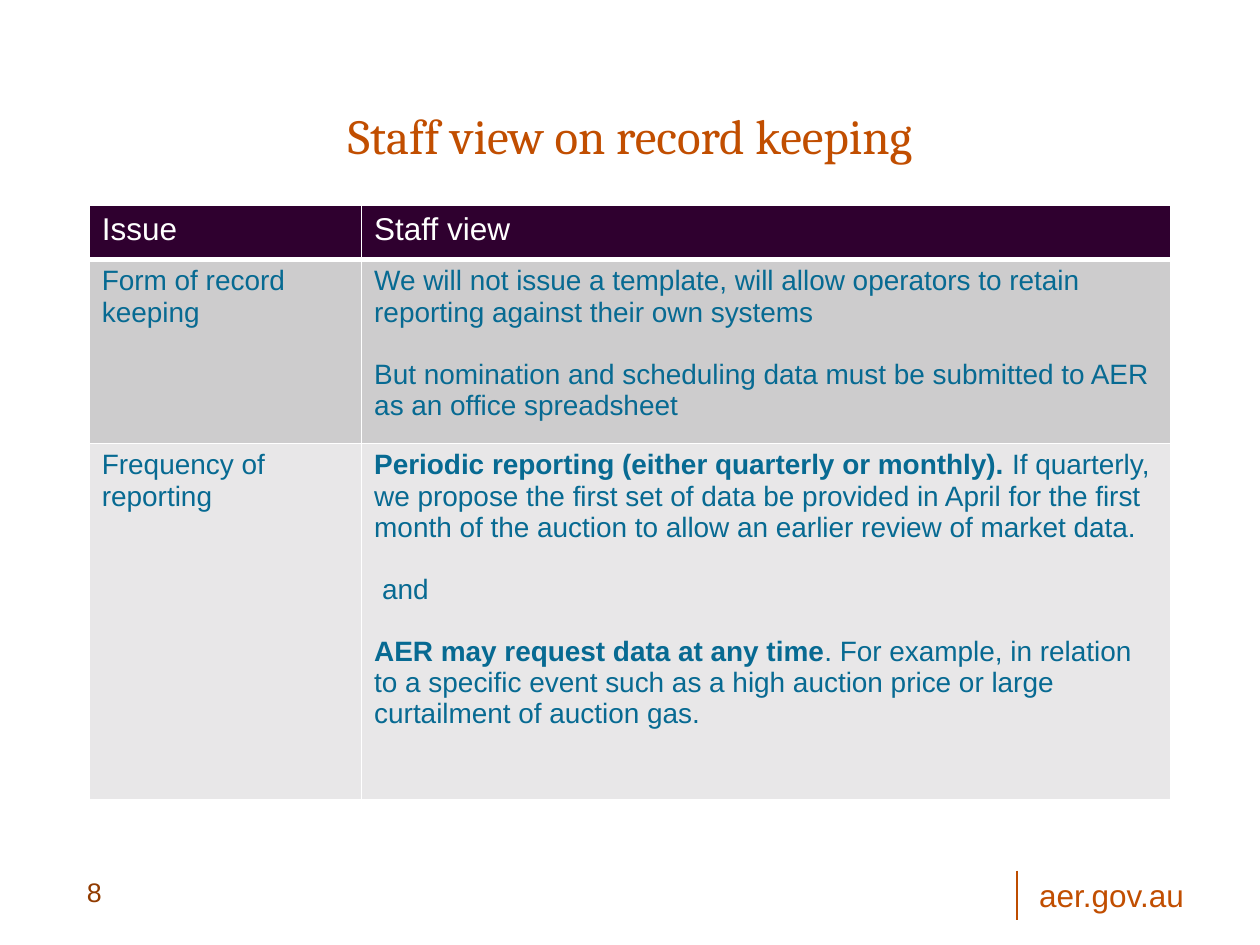
from dataclasses import dataclass
from typing import NamedTuple

from lxml.etree import SubElement
from pptx import Presentation
from pptx.dml.color import RGBColor
from pptx.enum.shapes import MSO_CONNECTOR
from pptx.enum.text import MSO_ANCHOR, PP_ALIGN
from pptx.oxml import parse_xml
from pptx.oxml.ns import nsdecls, qn
from pptx.util import Cm, Pt


@dataclass(frozen=True)
class Theme:
    sans: str = "Arial"
    serif: str = "Cambria"
    orange: str = "C14E00"
    rule: str = "BD4C00"
    brown: str = "913B00"
    plum: str = "2F002F"
    teal: str = "076A92"
    white: str = "FFFFFF"
    bands: tuple = ("CDCCCD", "E8E7E8")
    title: float = 28
    head: float = 18
    body: float = 16
    page: float = 15.3


class Run(NamedTuple):
    text: str
    bold: bool = False


class Para(NamedTuple):
    runs: list[Run]
    indent: float = 0


class Row(NamedTuple):
    issue: str
    view: list[Para]
    height: float


class Box(NamedTuple):
    left: float
    top: float
    width: float
    height: float

    def place(self) -> list:
        return [Cm(value) for value in self]


T = Theme()

ROWS = [
    Row("Form of record keeping", [
        Para([Run("We will not issue a template, will allow operators to retain "
                  "reporting against their own systems")]),
        Para([Run("But nomination and scheduling data must be submitted to AER "
                  "as an office spreadsheet")]),
    ], 3.71),
    Row("Frequency of reporting", [
        Para([Run("Periodic reporting (either quarterly or monthly). ", True),
              Run("If quarterly, we propose the first set of data be provided in "
                  "April for the first month of the auction to allow an earlier "
                  "review of market data.")]),
        Para([Run("and")], indent=0.16),
        Para([Run("AER may request data at any time", True),
              Run(". For example, in relation to a specific event such as a high "
                  "auction price or large curtailment of auction gas.")]),
    ], 7.19),
]


def write(frame, text: str | list[Para], *, size: float, color: str,
          font: str = T.sans, align=PP_ALIGN.LEFT, gap: float = 0) -> None:
    """Fill a text frame; gap is the space between paragraphs in points."""
    paras = [Para([Run(text)])] if isinstance(text, str) else text
    for index, para in enumerate(paras):
        line = frame.add_paragraph() if index else frame.paragraphs[0]
        line.alignment = align
        line.space_before = Pt(gap if index else 0)
        if para.indent:
            line._p.get_or_add_pPr().set("marL", str(Cm(para.indent)))
        for part in para.runs:
            run = line.add_run()
            run.text = part.text
            run.font.name = font
            run.font.size = Pt(size)
            run.font.bold = part.bold
            run.font.color.rgb = RGBColor.from_string(color)


def edge(cell, base: float = 1) -> None:
    """Draw white cell borders, with the bottom one base points wide."""
    props = cell._tc.get_or_add_tcPr()
    for index, side in enumerate("LRTB"):
        width = Pt(base if side == "B" else 1)
        props.insert(index, parse_xml(
            f'<a:ln{side} {nsdecls("a")} w="{width}"><a:solidFill>'
            f'<a:srgbClr val="{T.white}"/></a:solidFill></a:ln{side}>'))


def paint(cell, fill: str, base: float = 1) -> None:
    cell.fill.solid()
    cell.fill.fore_color.rgb = RGBColor.from_string(fill)
    edge(cell, base)


def label(slide, box: Box, text: str, size: float, color: str) -> None:
    frame = slide.shapes.add_textbox(*box.place()).text_frame
    frame.word_wrap = True
    write(frame, text, size=size, color=color)


def grid(slide, rows: list[Row]) -> None:
    heights = [1.09] + [row.height for row in rows]
    widths = [5.49, 16.31]
    box = Box(1.8, 4.14, sum(widths), sum(heights))
    table = slide.shapes.add_table(len(heights), len(widths), *box.place()).table
    for column, width in zip(table.columns, widths):
        column.width = Cm(width)
    for line, height in zip(table.rows, heights):
        line.height = Cm(height)

    # Header row
    for cell, text in zip(table.rows[0].cells, ("Issue", "Staff view")):
        paint(cell, T.plum, base=3)
        write(cell.text_frame, text, size=T.head, color=T.white)

    # Issue rows
    for line, row, fill in zip(list(table.rows)[1:], rows, T.bands):
        for cell, text in zip(line.cells, (row.issue, row.view)):
            paint(cell, fill)
            write(cell.text_frame, text, size=T.body, color=T.teal, gap=17.8)


def footer(slide) -> None:
    rule = slide.shapes.add_connector(
        MSO_CONNECTOR.STRAIGHT, Cm(20.5), Cm(17.55), Cm(20.5), Cm(18.54))
    rule.line.color.rgb = RGBColor.from_string(T.rule)
    rule.line.width = Pt(0.75)
    SubElement(rule._element.spPr, qn("a:effectLst"))
    label(slide, Box(20.7, 17.53, 3.99, 1.02), "aer.gov.au", T.head, T.orange)
    label(slide, Box(1.5, 17.53, 4.39, 0.81), "8", T.page, T.brown)


def main() -> None:
    deck = Presentation()
    deck.slide_width, deck.slide_height = Cm(25.4), Cm(19.05)
    slide = deck.slides.add_slide(deck.slide_layouts[5])

    # Title
    title = slide.shapes.title
    title.left, title.top, title.width, title.height = Box(1.3, 1.52, 22.8, 2.41).place()
    title.text_frame.vertical_anchor = MSO_ANCHOR.MIDDLE
    write(title.text_frame, "Staff view on record keeping", size=T.title,
          color=T.orange, font=T.serif, align=PP_ALIGN.CENTER)

    # Table and footer
    grid(slide, ROWS)
    footer(slide)
    deck.save("out.pptx")


if __name__ == "__main__":
    main()
